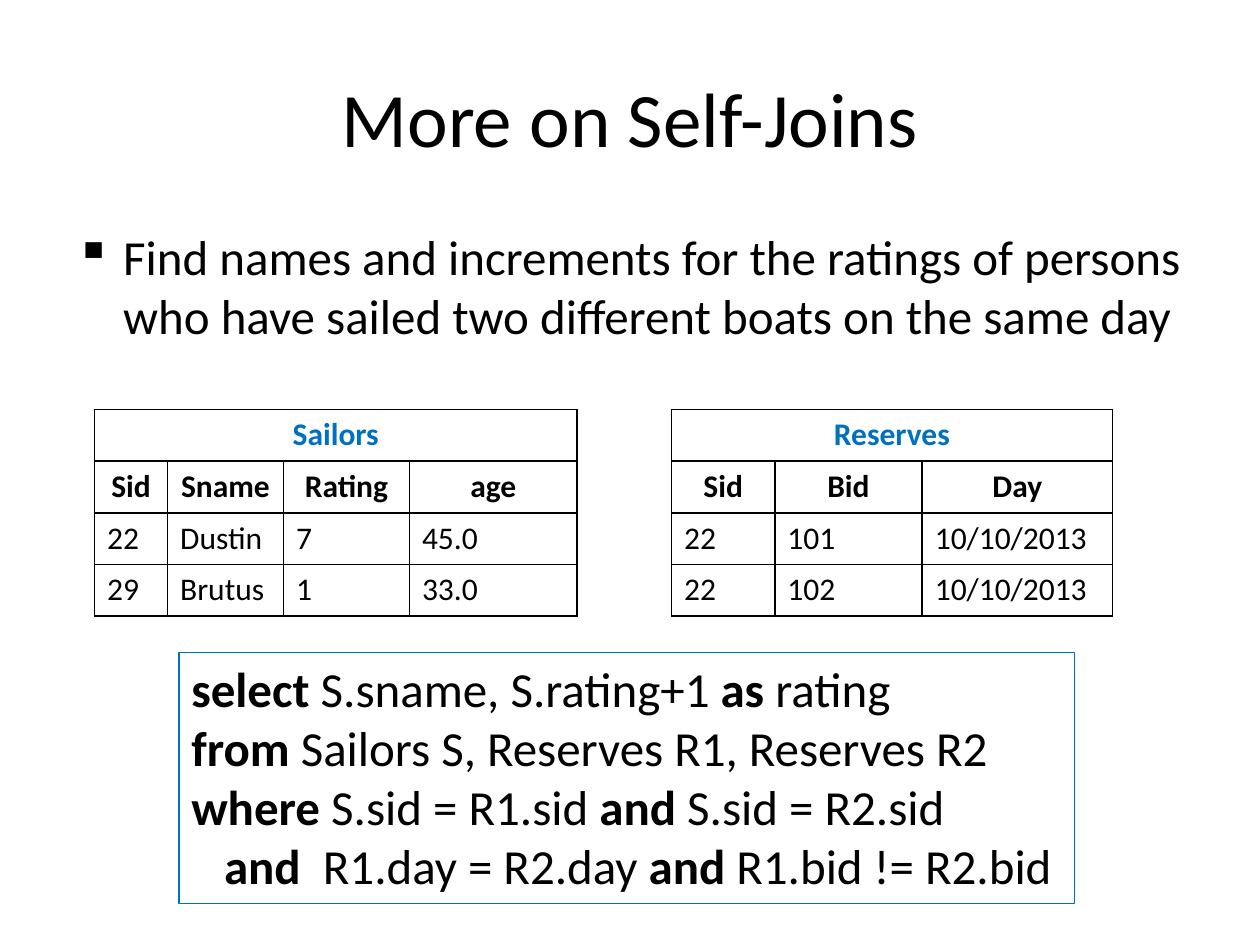
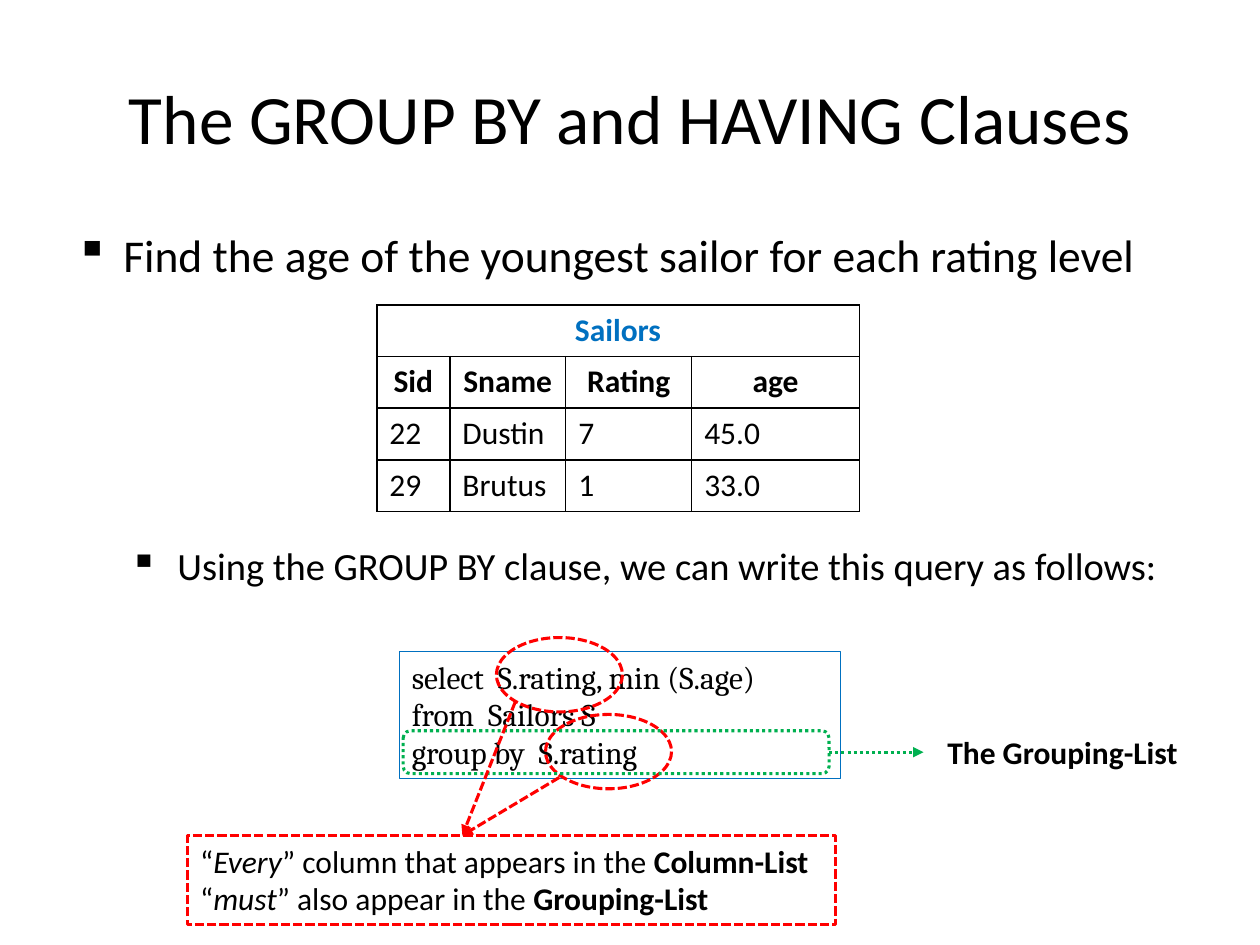
from lxml import etree
from pptx import Presentation
from pptx import util as u
from pptx.dml.color import RGBColor
from pptx.enum import dml, shapes, text
from pptx.oxml import ns

PX = 9144  # EMU per px, 100 px to the inch
COLORS = {"ink": "000000", "paper": "FFFFFF", "blue": "0070C0", "red": "FF0000", "green": "00B050"}
BODY_FONT, CODE_FONT = "Calibri", "Cambria"
DASH, DOT = dml.MSO_LINE.SQUARE_DOT, dml.MSO_LINE.ROUND_DOT
RECT, OVAL, ROUNDED = (shapes.MSO_SHAPE.RECTANGLE, shapes.MSO_SHAPE.OVAL,
                       shapes.MSO_SHAPE.ROUNDED_RECTANGLE)
LEFT, CENTER = text.PP_ALIGN.LEFT, text.PP_ALIGN.CENTER


def write(frame, lines, size, font=BODY_FONT, color="ink", align=LEFT):
    """Fill a text frame; each line is a list of (text, style), style being "", "b" or "i"."""
    for number, line in enumerate(lines):
        para = frame.add_paragraph() if number else frame.paragraphs[0]
        para.alignment = align
        for words, style in line:
            span = para.add_run()
            span.text = words
            looks = {"size": u.Pt(size), "name": font, "bold": "b" in style, "italic": "i" in style}
            for name, value in looks.items():
                setattr(span.font, name, value)
            span.font.color.rgb = RGBColor.from_string(COLORS[color])


def draw_line(line, color, width, dash=None):
    line.color.rgb = RGBColor.from_string(COLORS[color])
    line.width = u.Pt(width)
    if dash:
        line.dash_style = dash


deck = Presentation()
deck.slide_width, deck.slide_height = 1000 * PX, 750 * PX

# Titles and bullets: (words, size, level, space before in points)
outline = [
    ("More on Self-Joins", 44, 900, [
        ("Find names and increments for the ratings of persons who have sailed "
         "two different boats on the same day", 28, 0, 0)]),
    ("The GROUP BY and HAVING Clauses", 39.6, 925, [
        ("Find the age of the youngest sailor for each rating level", 26, 0, 0),
        ("Using the GROUP BY clause, we can write this query as follows:", 22, 1, 149)]),
]
bullet_indents = [38, 81]
pages = []
for heading, heading_size, body_width, bullets in outline:
    page = deck.slides.add_slide(deck.slide_layouts[5])
    pages.append(page)
    title = page.shapes.title
    title.left, title.top, title.width, title.height = [n * PX for n in (50, 30, 900, 125)]
    title.text_frame.vertical_anchor = text.MSO_ANCHOR.MIDDLE
    title.text_frame.auto_size = text.MSO_AUTO_SIZE.NONE
    write(title.text_frame, [[(heading, "")]], heading_size, align=CENTER)

    body = page.shapes.add_textbox(50 * PX, 175 * PX, body_width * PX, 495 * PX).text_frame
    body.word_wrap = True
    for number, (words, size, level, gap) in enumerate(bullets):
        para = body.add_paragraph() if number else body.paragraphs[0]
        para.level = level
        para.space_before = u.Pt(gap)
        span = para.add_run()
        span.text = words
        span.font.size, span.font.name = u.Pt(size), BODY_FONT
        span.font.color.rgb = RGBColor.from_string(COLORS["ink"])
        props = para._p.get_or_add_pPr()
        props.set("marL", str(bullet_indents[level] * PX))
        props.set("indent", str(-38 * PX))
        etree.SubElement(props, ns.qn("a:buChar"), char="▪")

join_page, group_page = pages

# Tables
sailors = ("Sailors", [58, 92, 100, 133], [
    ["Sid", "Sname", "Rating", "age"],
    ["22", "Dustin", "7", "45.0"],
    ["29", "Brutus", "1", "33.0"]])
reserves = ("Reserves", [82, 117, 151], [
    ["Sid", "Bid", "Day"],
    ["22", "101", "10/10/2013"],
    ["22", "102", "10/10/2013"]])
ROW = 41
for page, left, top, (name, widths, records) in [
        (join_page, 75, 325, sailors),
        (join_page, 533, 325, reserves),
        (group_page, 299, 242, sailors)]:
    rows = [[name] + [""] * (len(widths) - 1)] + records
    table = page.shapes.add_table(len(rows), len(widths), left * PX, top * PX,
                                  sum(widths) * PX, ROW * len(rows) * PX).table
    table.first_row = table.horz_banding = False
    for column, width in zip(table.columns, widths):
        column.width = width * PX
    for r, row in enumerate(rows):
        table.rows[r].height = ROW * PX
        for c, words in enumerate(row):
            cell = table.cell(r, c)
            if words:
                write(cell.text_frame, [[(words, "b" if r < 2 else "")]], 18,
                      color="ink" if r else "blue", align=CENTER if r < 2 else LEFT)
            props = cell._tc.get_or_add_tcPr()
            for side in ("lnL", "lnR", "lnT", "lnB"):
                border = etree.SubElement(props, ns.qn("a:" + side), w=str(u.Pt(1)))
                paint = etree.SubElement(border, ns.qn("a:solidFill"))
                etree.SubElement(paint, ns.qn("a:srgbClr"), val=COLORS["ink"])
            cell.fill.solid()
            cell.fill.fore_color.rgb = RGBColor.from_string(COLORS["paper"])
    table.cell(0, 0).merge(table.cell(0, len(widths) - 1))

# Queries, rings and the callout
join_query = [
    [("select ", "b"), ("S.sname, S.rating+1 ", ""), ("as", "b"), (" rating", "")],
    [("from ", "b"), ("Sailors S, Reserves R1, Reserves R2", "")],
    [("where ", "b"), ("S.sid = R1.sid ", ""), ("and ", "b"), ("S.sid = R2.sid", "")],
    [("and  ", "b"), ("R1.day = R2.day ", ""), ("and", "b"), (" R1.bid != R2.bid", "")],
]
group_query = [[("select  S.rating, min (S.age)", "")],
               [("from  Sailors S", "")],
               [("group by  S.rating", "")]]
rule = [
    [("“", ""), ("Every", "i"), ("” column that appears in the ", ""), ("Column-List", "b")],
    [("“", ""), ("must", "i"), ("” also appear in the ", ""), ("Grouping-List", "b")],
]
frames = [
    (join_page, RECT, (142, 518, 711, 199), ("blue", 0.75), join_query, 28, BODY_FONT),
    (group_page, RECT, (317, 517, 350, 101), ("blue", 0.75), group_query, 18, CODE_FONT),
    (group_page, OVAL, (394, 506, 100, 59), ("red", 1.75, DASH), [], 18, BODY_FONT),
    (group_page, OVAL, (433, 567, 100, 59), ("red", 1.75, DASH), [], 18, BODY_FONT),
    (group_page, RECT, (149, 663, 514, 71), ("red", 1.75, DASH), rule, 18, BODY_FONT),
    (group_page, ROUNDED, (320, 580, 338, 34), ("green", 1.75, DOT), [], 18, BODY_FONT),
]
for page, kind, place, stroke, lines, size, font in frames:
    box = page.shapes.add_shape(kind, *[n * PX for n in place])
    box.shadow.inherit = False
    box.fill.background()
    draw_line(box.line, *stroke)
    box.text_frame.word_wrap = True
    box.text_frame.vertical_anchor = text.MSO_ANCHOR.TOP
    write(box.text_frame, lines, size, font)
    if lines is join_query:
        box.text_frame.paragraphs[-1]._p.get_or_add_pPr().set("marL", str(26 * PX))

# Arrows
for ends, color, dash in [
        ((409, 557, 367, 663), "red", DASH),
        ((444, 617, 367, 663), "red", DASH),
        ((658, 597, 733, 597), "green", DOT)]:
    arrow = group_page.shapes.add_connector(shapes.MSO_CONNECTOR.STRAIGHT, *[n * PX for n in ends])
    draw_line(arrow.line, color, 1.75, dash)
    etree.SubElement(arrow.line._get_or_add_ln(), ns.qn("a:tailEnd"), type="triangle")
    etree.SubElement(arrow._element.spPr, ns.qn("a:effectLst"))

label = group_page.shapes.add_textbox(742 * PX, 577 * PX, 215 * PX, 40 * PX)
label.text_frame.word_wrap = True
write(label.text_frame, [[("The Grouping-List", "b")]], 18)

deck.save("out.pptx")
